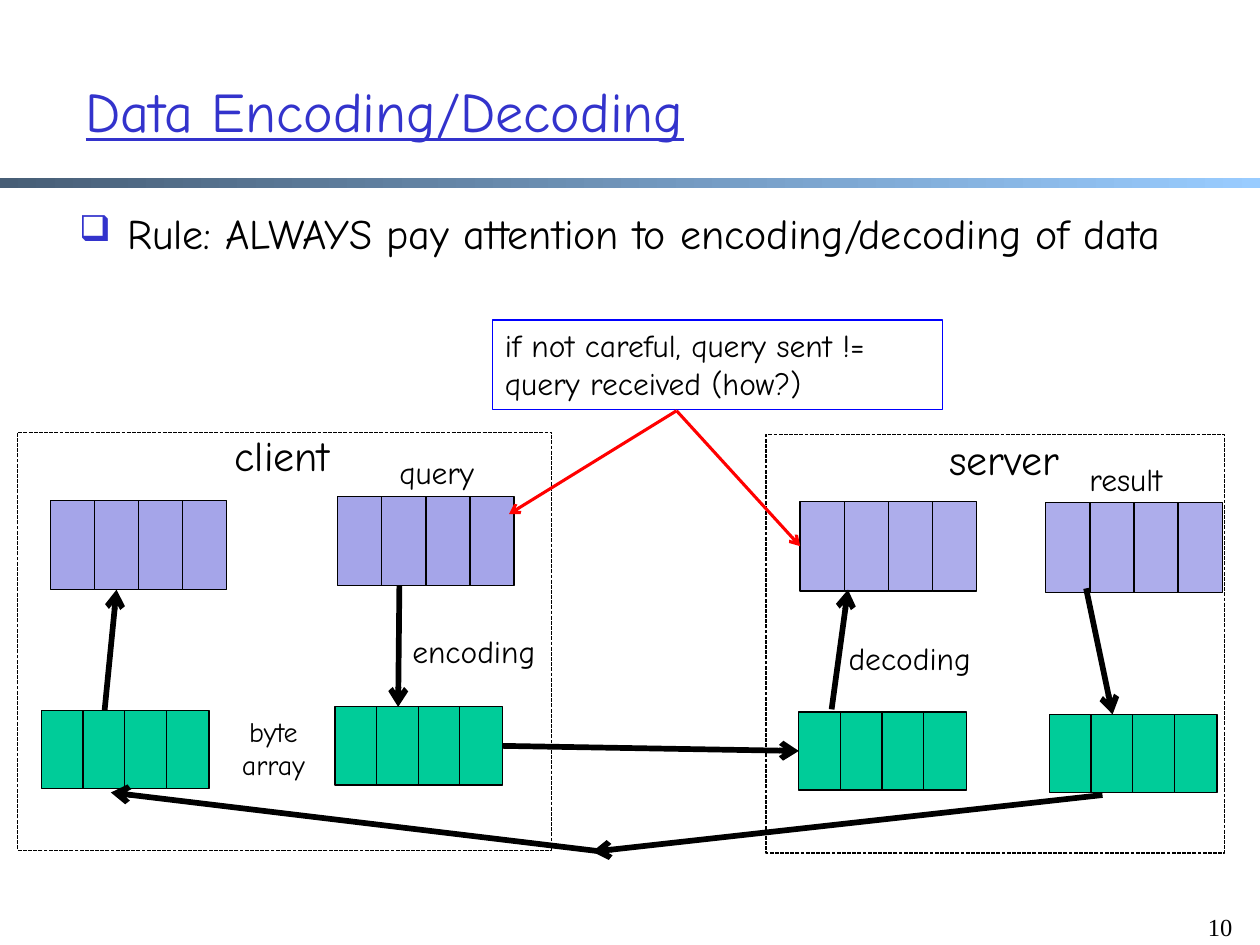
import pptx
import pptx.dml.color
import pptx.enum.dml
import pptx.enum.shapes
import pptx.enum.text
import pptx.oxml
import pptx.oxml.ns
import pptx.util

Inches = pptx.util.Inches
Pt = pptx.util.Pt
RGBColor = pptx.dml.color.RGBColor
ALIGN = pptx.enum.text.PP_ALIGN
ANCHOR = pptx.enum.text.MSO_ANCHOR
RECTANGLE = pptx.enum.shapes.MSO_SHAPE.RECTANGLE
STRAIGHT = pptx.enum.shapes.MSO_CONNECTOR.STRAIGHT

BLACK = RGBColor(0x00, 0x00, 0x00)
WHITE = RGBColor(0xFF, 0xFF, 0xFF)
RED = RGBColor(0xFF, 0x00, 0x00)
BLUE = RGBColor(0x00, 0x00, 0xFF)
TITLE_BLUE = RGBColor(0x33, 0x33, 0xCC)
BAR_DARK = RGBColor(0x47, 0x5E, 0x76)
BAR_LIGHT = RGBColor(0x99, 0xCC, 0xFF)
GREEN = RGBColor(0x00, 0xCC, 0x99)
CLIENT_PURPLE = RGBColor(0xA5, 0xA5, 0xE9)
SERVER_PURPLE = RGBColor(0xAD, 0xAD, 0xEB)
FONT = "Comic Neue"

TITLE = "Data Encoding/Decoding"
RULE = "Rule: ALWAYS pay attention to encoding/decoding of data"
WARNING = "if not careful, query sent != query received (how?)"
PAGE_NUMBER = "10"

PANELS = [(0.14, 3.43, 4.24, 3.32), (6.08, 3.45, 3.64, 3.32)]

CELL_COUNT = 4
DATA = {"width": 0.35, "height": 0.71, "pitch": 0.35}
BYTES = {"width": 0.34, "height": 0.62, "pitch": 0.33}
ARRAYS = {
    "query": (2.68, 3.94, DATA, CLIENT_PURPLE),
    "query bytes": (2.66, 5.61, BYTES, GREEN),
    "received query": (6.35, 3.98, DATA, SERVER_PURPLE),
    "received query bytes": (6.34, 5.65, BYTES, GREEN),
    "result": (8.3, 3.99, DATA, SERVER_PURPLE),
    "result bytes": (8.33, 5.67, BYTES, GREEN),
    "received result": (0.4, 3.97, DATA, CLIENT_PURPLE),
    "received result bytes": (0.33, 5.64, BYTES, GREEN),
}

LABELS = [
    ("client", (1.7, 3.36, 1.08, 0.5), 24),
    ("server", (7.36, 3.39, 1.22, 0.5), 24),
    ("query", (2.39, 3.55, 2.15, 0.4), 18),
    ("result", (7.86, 3.6, 2.15, 0.4), 18),
    ("encoding", (3.15, 4.97, 1.22, 0.4), 18),
    ("decoding", (6.6, 5.02, 1.24, 0.4), 18),
    ("byte\narray", (1.78, 5.62, 0.78, 0.64), 16),
]

# Each joint is (array, cell, side).
ARROWS = [
    ((3.17, 4.65), (3.19, 5.61), BLACK, 3.25, None, ("query bytes", 1, 0)),
    ((4.01, 5.91), (6.34, 5.95), BLACK, 3.25,
     ("query bytes", 3, 3), ("received query bytes", 0, 1)),
    ((6.6, 5.63), (6.73, 4.68), BLACK, 3.25, None, None),
    ((8.62, 4.67), (8.83, 5.67), BLACK, 3.25, None, ("result bytes", 1, 0)),
    ((8.75, 6.31), (4.7, 6.76), BLACK, 3.25, None, None),
    ((4.79, 6.76), (0.88, 6.29), BLACK, 3.25, None, None),
    ((0.83, 5.64), (0.91, 4.67), BLACK, 3.25,
     ("received result bytes", 1, 0), ("received result", 1, 2)),
    ((5.37, 3.26), (6.35, 4.33), RED, 1.75, None, ("received query", 0, 1)),
    ((5.37, 3.26), (4.04, 4.08), RED, 1.75, None, None),
]


def write_text(shape, text, size=18, font=FONT, color=BLACK, align=ALIGN.LEFT,
               anchor=ANCHOR.TOP, underline=None, wrap=True):
    frame = shape.text_frame
    frame.word_wrap = wrap
    frame.vertical_anchor = anchor
    frame.text = text
    for paragraph in frame.paragraphs:
        paragraph.alignment = align
        for run in paragraph.runs:
            run.font.size = Pt(size)
            run.font.name = font
            run.font.color.rgb = color
            run.font.underline = underline


def add_text(slide, box, text, **text_format):
    shape = slide.shapes.add_textbox(*map(Inches, box))
    write_text(shape, text, **text_format)
    return shape


def add_rectangle(shapes, box, fill=None, line=BLACK, dash=None):
    shape = shapes.add_shape(RECTANGLE, *map(Inches, box))
    shape.shadow.inherit = False
    if fill is None:
        shape.fill.background()
    else:
        shape.fill.solid()
        shape.fill.fore_color.rgb = fill
    if line is None:
        shape.line.fill.background()
    else:
        shape.line.color.rgb = line
        shape.line.width = Pt(0.75)
        shape.line.dash_style = dash
    return shape


def add_array(slide, left, top, cell, fill):
    group = slide.shapes.add_group_shape()
    return [
        add_rectangle(group.shapes,
                      (left + index * cell["pitch"], top, cell["width"], cell["height"]),
                      fill)
        for index in range(CELL_COUNT)
    ]


def add_arrow(slide, arrays, start, end, color, width, start_joint, end_joint):
    connector = slide.shapes.add_connector(STRAIGHT, *map(Inches, start + end))
    if start_joint:
        name, cell, side = start_joint
        connector.begin_connect(arrays[name][cell], side)
    if end_joint:
        name, cell, side = end_joint
        connector.end_connect(arrays[name][cell], side)
    connector.line.color.rgb = color
    connector.line.width = Pt(width)
    head = pptx.oxml.ns.qn("a:tailEnd")
    connector.line._get_or_add_ln().append(
        connector._element.makeelement(head, {"type": "arrow"}))
    properties = connector._element.spPr
    properties.append(properties.makeelement(pptx.oxml.ns.qn("a:effectLst"), {}))


def add_bullet(paragraph):
    properties = paragraph._p.get_or_add_pPr()
    properties.set("marL", str(Inches(0.38)))
    properties.set("indent", str(Inches(-0.38)))
    namespace = pptx.oxml.ns.nsdecls("a")
    for xml in (
        f'<a:buClr {namespace}><a:srgbClr val="{TITLE_BLUE}"/></a:buClr>',
        f'<a:buSzPct {namespace} val="85000"/>',
        f'<a:buChar {namespace} char="❑"/>',
    ):
        properties.append(pptx.oxml.parse_xml(xml))


def main():
    presentation = pptx.Presentation()
    presentation.slide_width = Inches(10)
    presentation.slide_height = Inches(7.5)
    slide = presentation.slides.add_slide(presentation.slide_layouts[5])

    bar = add_rectangle(slide.shapes, (0, 1.41, 10, 0.08), line=None)
    bar.fill.gradient()
    bar.fill.gradient_angle = 0
    for stop, color in zip(bar.fill.gradient_stops, (BAR_DARK, BAR_LIGHT)):
        stop.color.rgb = color

    title = slide.shapes.title
    title.left, title.top, title.width, title.height = map(Inches, (0.58, 0.25, 8.5, 1.25))
    write_text(title, TITLE, size=32, color=TITLE_BLUE, anchor=ANCHOR.MIDDLE, underline=True)

    rule = add_text(slide, (0.53, 1.6, 8.95, 0.6), RULE, size=24)
    rule.text_frame.paragraphs[0].space_before = Pt(4.8)
    add_bullet(rule.text_frame.paragraphs[0])
    add_text(slide, (9.38, 7.19, 0.5, 0.3), PAGE_NUMBER, size=14,
             font="Times New Roman", align=ALIGN.RIGHT)

    for box in PANELS:
        add_rectangle(slide.shapes, box, WHITE, dash=pptx.enum.dml.MSO_LINE.SQUARE_DOT)
    arrays = {name: add_array(slide, *array) for name, array in ARRAYS.items()}
    for text, box, size in LABELS:
        add_text(slide, box, text, size=size, align=ALIGN.CENTER, wrap=False)
    warning = add_rectangle(slide.shapes, (3.91, 2.54, 3.57, 0.71), line=BLUE)
    write_text(warning, WARNING)
    for arrow in ARROWS:
        add_arrow(slide, arrays, *arrow)

    presentation.save("out.pptx")


if __name__ == "__main__":
    main()
